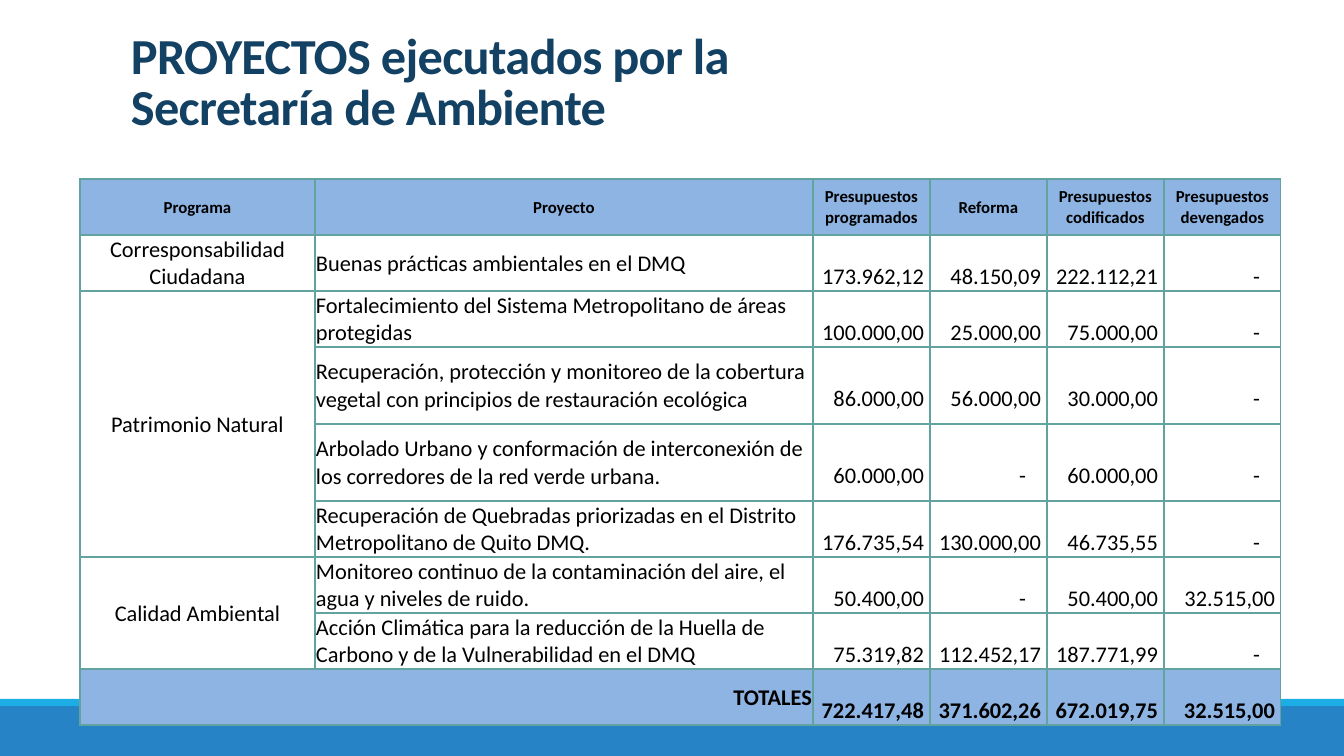
from dataclasses import dataclass

from lxml import etree
from pptx import Presentation
from pptx import util as u
from pptx.dml import color
from pptx.enum import shapes, text
from pptx.oxml import ns

SCALE = 914400 / 100.8  # EMU in one px


@dataclass(frozen=True)
class Theme:
    font: str = "Calibri"
    title: str = "134163"
    ink: str = "000000"
    head: str = "8DB4E2"
    body: str = "FFFFFF"
    grid: str = "62A39F"
    band: str = "2683C6"
    strip: str = "1CADE4"
    title_pt: int = 36
    head_pt: int = 12
    body_pt: int = 16


@dataclass(frozen=True)
class Band:
    top: int
    height: int
    fill: str


@dataclass(frozen=True)
class Style:
    align: text.PP_ALIGN
    size: int
    bold: bool
    fill: str
    top: int = 1
    right: int = 1


THEME = Theme()
ALIGN = text.PP_ALIGN
WIDTH, HEIGHT = 1344, 756
BANDS = [Band(706, 50, THEME.band), Band(699, 7, THEME.strip)]
LEFT, TOP = 80, 179
COLS = [235, 498] + [117] * 4
ROWS = [56, 56, 56, 77, 77, 56, 56, 56, 56]
SPANS = [((2, 0), (5, 0)), ((6, 0), (7, 0)), ((8, 0), (8, 1))]
LINE = 27  # amounts sit one text line lower than the project names
DATA = [
    ["Programa", "Proyecto", "Presupuestos programados", "Reforma",
     "Presupuestos codificados", "Presupuestos devengados"],
    ["Corresponsabilidad Ciudadana", "Buenas prácticas ambientales en el DMQ",
     "173.962,12", "48.150,09", "222.112,21", "-"],
    ["Patrimonio Natural",
     "Fortalecimiento del Sistema Metropolitano de áreas protegidas",
     "100.000,00", "25.000,00", "75.000,00", "-"],
    ["", "Recuperación, protección y monitoreo de la cobertura vegetal "
     "con principios de restauración ecológica",
     "86.000,00", "56.000,00", "30.000,00", "-"],
    ["", "Arbolado Urbano y conformación de interconexión de los corredores "
     "de la red verde urbana.",
     "60.000,00", "-", "60.000,00", "-"],
    ["", "Recuperación de Quebradas priorizadas en el Distrito "
     "Metropolitano de Quito DMQ.",
     "176.735,54", "130.000,00", "46.735,55", "-"],
    ["Calidad Ambiental",
     "Monitoreo continuo de la contaminación del aire, el agua "
     "y niveles de ruido.",
     "50.400,00", "-", "50.400,00", "32.515,00"],
    ["", "Acción Climática para la reducción de la Huella de Carbono "
     "y de la Vulnerabilidad en el DMQ",
     "75.319,82", "112.452,17", "187.771,99", "-"],
    ["TOTALES", "", "722.417,48", "371.602,26", "672.019,75", "32.515,00"],
]


def px(num: int) -> u.Emu:
    return u.Emu(round(num * SCALE))


def rgb(code: str) -> color.RGBColor:
    return color.RGBColor.from_string(code)


def format_runs(para, size: int, ink: str, bold: bool) -> None:
    for run in para.runs:
        font = run.font
        font.name, font.size, font.bold = THEME.font, u.Pt(size), bold
        font.color.rgb = rgb(ink)


def draw_band(slide, band: Band) -> None:
    shape = slide.shapes.add_shape(
        shapes.MSO_SHAPE.RECTANGLE, 0, px(band.top), px(WIDTH), px(band.height))
    shape.shadow.inherit = False
    shape.fill.solid()
    shape.fill.fore_color.rgb = rgb(band.fill)
    shape.line.fill.background()


def draw_title(slide) -> None:
    title = slide.shapes.title
    title.left, title.top = px(121), px(31)
    title.width, title.height = px(905), px(168)
    frame = title.text_frame
    frame.text = "PROYECTOS ejecutados por la\vSecretaría de Ambiente"
    frame.word_wrap = True
    frame.auto_size = text.MSO_AUTO_SIZE.NONE
    frame.vertical_anchor = text.MSO_ANCHOR.BOTTOM
    frame.margin_left = frame.margin_right = px(10)
    frame.margin_top, frame.margin_bottom = 0, px(63)
    para = frame.paragraphs[0]
    para.alignment, para.line_spacing = ALIGN.LEFT, 0.85
    format_runs(para, THEME.title_pt, THEME.title, True)
    for run in para.runs:
        run.font._element.set("spc", "-50")


def pick_style(row: int, col: int, value: str) -> Style:
    if row == 0:
        return Style(ALIGN.CENTER, THEME.head_pt, True, THEME.head)
    last = row == len(DATA) - 1
    fill = THEME.head if last else THEME.body
    if col > 1:
        right = 21 if value == "-" else 6
        return Style(ALIGN.RIGHT, THEME.body_pt, last, fill, LINE, right)
    if last:
        return Style(ALIGN.RIGHT, THEME.body_pt, True, fill)
    align = ALIGN.LEFT if col else ALIGN.CENTER
    return Style(align, THEME.body_pt, False, fill)


def add_grid(cell) -> None:
    props = cell._tc.get_or_add_tcPr()
    for side in ("a:lnL", "a:lnR", "a:lnT", "a:lnB"):
        line = etree.SubElement(props, ns.qn(side), w=str(u.Pt(1)))
        fill = etree.SubElement(line, ns.qn("a:solidFill"))
        etree.SubElement(fill, ns.qn("a:srgbClr"), val=THEME.grid)


def fill_cell(cell, value: str, style: Style) -> None:
    add_grid(cell)
    cell.fill.solid()
    cell.fill.fore_color.rgb = rgb(style.fill)
    cell.vertical_anchor = text.MSO_ANCHOR.MIDDLE
    cell.margin_left, cell.margin_right = px(1), px(style.right)
    cell.margin_top, cell.margin_bottom = px(style.top), 0
    para = cell.text_frame.paragraphs[0]
    para.text = value
    para.alignment = style.align
    para.font.size = u.Pt(style.size)
    format_runs(para, style.size, THEME.ink, style.bold)


def draw_table(slide) -> None:
    table = slide.shapes.add_table(
        len(ROWS), len(COLS), px(LEFT), px(TOP),
        px(sum(COLS)), px(sum(ROWS))).table
    table.first_row = table.horz_banding = False
    for col, width in zip(table.columns, COLS):
        col.width = px(width)
    for row, height in zip(table.rows, ROWS):
        row.height = px(height)
    for r, values in enumerate(DATA):
        for c, value in enumerate(values):
            fill_cell(table.cell(r, c), value, pick_style(r, c, value))
    for start, end in SPANS:
        table.cell(*start).merge(table.cell(*end))


def main() -> None:
    deck = Presentation()
    deck.slide_width, deck.slide_height = px(WIDTH), px(HEIGHT)
    slide = deck.slides.add_slide(deck.slide_layouts[5])
    # Footer bands
    for band in BANDS:
        draw_band(slide, band)
    # Heading and budget table
    draw_title(slide)
    draw_table(slide)
    deck.save("out.pptx")


if __name__ == "__main__":
    main()
